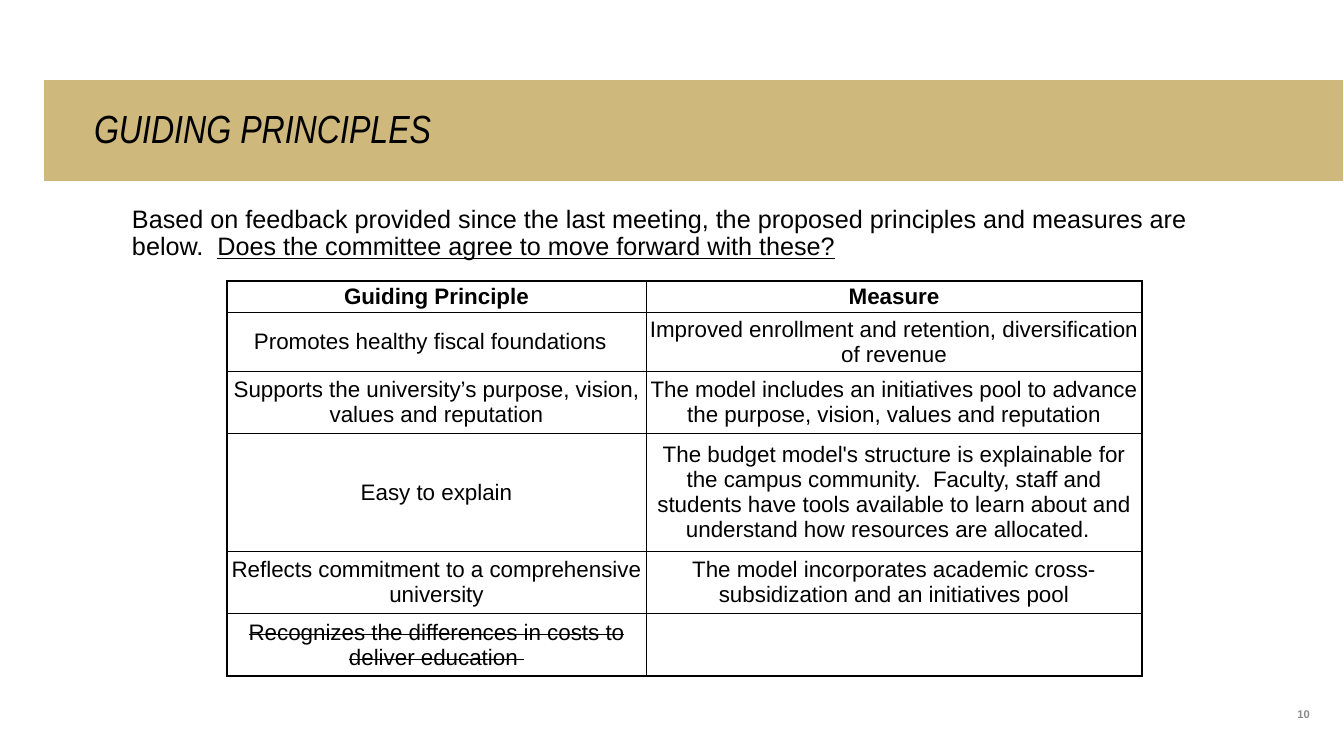
import pptx
import pptx.dml.color
import pptx.enum.text
import pptx.oxml
import pptx.oxml.ns
import pptx.util
from dataclasses import dataclass

ALIGN = pptx.enum.text.PP_ALIGN
ANCHOR = pptx.enum.text.MSO_ANCHOR


@dataclass(frozen=True)
class Theme:
    ink: str = "000000"
    gold: str = "CFB87C"
    gray: str = "8C8C8C"
    font: str = "Arial"
    title_font: str = "Arial Narrow"
    title_size: int = 28
    body_size: int = 18
    table_size: int = 16
    number_size: int = 8
    outer_line: float = 1
    inner_line: float = 0.5


def px(value):
    return pptx.util.Emu(round(value * 914400 / 100.8))


def apply(target, values):
    for name, value in values.items():
        setattr(target, name, value)


class SlideBuilder:
    def __init__(self, deck, theme):
        self.theme = theme
        self.page = deck.slides.add_slide(deck.slide_layouts[5])

    def style(self, font, color, **values):
        apply(font, values)
        font.color.rgb = pptx.dml.color.RGBColor.from_string(color)

    def frame(self, target, insets, anchor):
        left, top, right, bottom = map(px, insets)
        apply(target, {"margin_left": left, "margin_top": top,
                       "margin_right": right, "margin_bottom": bottom,
                       "vertical_anchor": anchor})

    def place(self, box, left, top, width, height):
        apply(box, {"left": px(left), "top": px(top),
                    "width": px(width), "height": px(height)})

    def title(self, text, bounds):
        box = self.page.shapes.title
        self.place(box, *bounds)
        box.fill.solid()
        box.fill.fore_color.rgb = pptx.dml.color.RGBColor.from_string(self.theme.gold)
        box.text_frame.auto_size = pptx.enum.text.MSO_AUTO_SIZE.NONE
        self.frame(box.text_frame, (50, 5, 101, 5), ANCHOR.MIDDLE)
        para = box.text_frame.paragraphs[0]
        apply(para, {"alignment": ALIGN.LEFT, "line_spacing": 0.9})
        span = para.add_run()
        span.text = text
        self.style(span.font, self.theme.ink, name=self.theme.title_font,
                   size=pptx.util.Pt(self.theme.title_size), italic=True)

    def text(self, spans, bounds, insets, size, color, anchor=ANCHOR.TOP,
             paragraph=None, **font):
        box = self.page.shapes.add_textbox(*map(px, bounds))
        box.text_frame.word_wrap = True
        self.frame(box.text_frame, insets, anchor)
        para = box.text_frame.paragraphs[0]
        apply(para, paragraph or {})
        for words, extra in spans:
            span = para.add_run()
            span.text = words
            self.style(span.font, color, name=self.theme.font,
                       size=pptx.util.Pt(size), **font, **extra)

    def border(self, cell, side, width):
        line = pptx.oxml.parse_xml(
            f'<a:ln{side} {pptx.oxml.ns.nsdecls("a")} w="{pptx.util.Pt(width)}">'
            f'<a:solidFill><a:srgbClr val="{self.theme.ink}"/></a:solidFill></a:ln{side}>')
        cell._tc.get_or_add_tcPr().append(line)

    def table(self, rows, left, top, widths, heights, struck_row):
        bounds = (left, top, sum(widths), sum(heights))
        grid = self.page.shapes.add_table(len(rows), len(widths), *map(px, bounds)).table
        apply(grid, {"first_row": False, "horz_banding": False})
        for column, width in zip(grid.columns, widths):
            column.width = px(width)
        for row, height in zip(grid.rows, heights):
            row.height = px(height)
        last_row, last_column = len(rows) - 1, len(widths) - 1
        for r, row in enumerate(rows):
            for c, words in enumerate(row):
                cell = grid.cell(r, c)
                self.frame(cell, (1, 1, 1, 0), ANCHOR.MIDDLE)
                # Heavier rule around the outside of the grid
                edges = {"L": c == 0, "R": c == last_column,
                         "T": r == 0, "B": r == last_row}
                for side, outer in edges.items():
                    self.border(cell, side,
                                self.theme.outer_line if outer else self.theme.inner_line)
                cell.fill.background()
                para = cell.text_frame.paragraphs[0]
                para.alignment = ALIGN.CENTER
                para.font.size = pptx.util.Pt(self.theme.table_size)
                if not words:
                    continue
                span = para.add_run()
                span.text = words
                self.style(span.font, self.theme.ink, name=self.theme.font,
                           size=pptx.util.Pt(self.theme.table_size), bold=r == 0)
                if r == struck_row:
                    span.font._element.set("strike", "sngStrike")


PRINCIPLES = [
    ("Guiding Principle", "Measure"),
    ("Promotes healthy fiscal foundations  ",
     "Improved enrollment and retention, diversification of revenue"),
    ("Supports the university’s purpose, vision, values and reputation",
     "The model includes an initiatives pool to advance the purpose, vision, "
     "values and reputation"),
    ("Easy to explain",
     "The budget model's structure is explainable for the campus community.  "
     "Faculty, staff and students have tools available to learn about and "
     "understand how resources are allocated.  "),
    ("Reflects commitment to a comprehensive university",
     "The model incorporates academic cross-subsidization and an initiatives pool"),
    ("Recognizes the differences in costs to deliver education ", ""),
]


def main():
    deck = pptx.Presentation()
    apply(deck, {"slide_width": px(1344), "slide_height": px(756)})
    theme = Theme()
    slide = SlideBuilder(deck, theme)

    # Title band
    slide.title("GUIDING PRINCIPLES", (44, 80, 1299, 101))

    # Question to the committee
    slide.text([("Based on feedback provided since the last meeting, the proposed "
                 "principles and measures are below.  ", {}),
                ("Does the committee agree to move forward with these?",
                 {"underline": True})],
               (108, 202, 1117, 70), (24, 5, 10, 5), theme.body_size, theme.ink,
               paragraph={"line_spacing": 0.9})

    # Principles and measures
    slide.table(PRINCIPLES, 227, 281, (419, 496), (31, 59, 62, 118, 62, 63),
                struck_row=len(PRINCIPLES) - 1)

    # Page number
    slide.text([("10", {})], (1225, 671, 85, 50), (0, 0, 0, 0), theme.number_size,
               theme.gray, ANCHOR.BOTTOM, {"alignment": ALIGN.RIGHT}, bold=True)

    deck.save("out.pptx")


if __name__ == "__main__":
    main()
